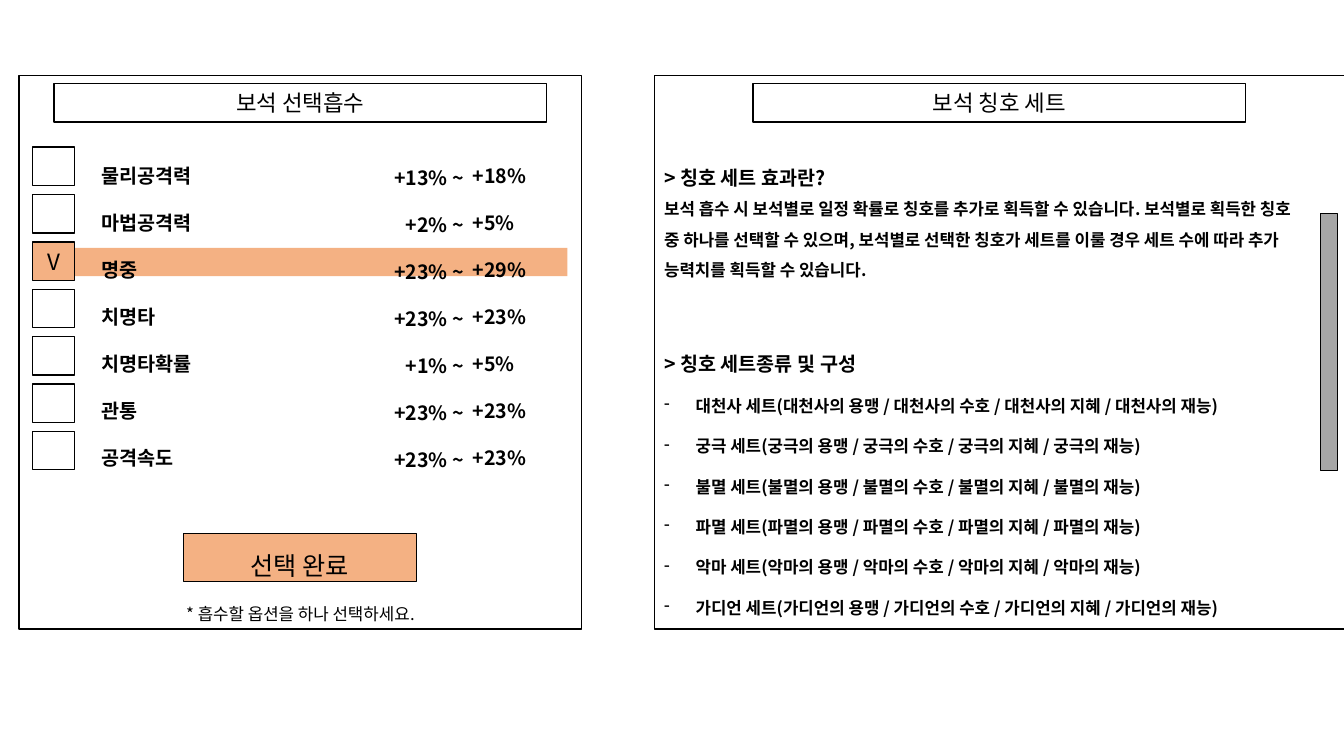
from lxml.etree import SubElement
from pptx import Presentation
from pptx.dml.color import RGBColor
from pptx.enum.shapes import MSO_SHAPE
from pptx.enum.text import MSO_ANCHOR, MSO_AUTO_SIZE, PP_ALIGN
from pptx.oxml.ns import qn
from pptx.util import Pt

BLACK = RGBColor(0, 0, 0)
WHITE = RGBColor(255, 255, 255)
ORANGE = RGBColor(0xF4, 0xB1, 0x83)
GRAY = RGBColor(0xA6, 0xA6, 0xA6)
FONT = "Noto Sans CJK KR"

STATS = [
    ("물리공격력", "+13% ~", "+18%"),
    ("마법공격력", "+2% ~", "+5%"),
    ("명중", "+23% ~", "+29%"),
    ("치명타", "+23% ~", "+23%"),
    ("치명타확률", "+1% ~", "+5%"),
    ("관통", "+23% ~", "+23%"),
    ("공격속도", "+23% ~", "+23%"),
]
CHOSEN = 2
PITCH = 33.84
SETS = ["대천사", "궁극", "불멸", "파멸", "악마", "가디언"]
TRAITS = ["용맹", "수호", "지혜", "재능"]
ABOUT = (
    "보석 흡수 시 보석별로 일정 확률로 칭호를 추가로 획득할 수 있습니다. "
    "보석별로 획득한 칭호 중 하나를 선택할 수 있으며, "
    "보석별로 선택한 칭호가 세트를 이룰 경우 세트 수에 따라 "
    "추가 능력치를 획득할 수 있습니다."
)


def add_run(para, text, size, bold=False):
    run = para.add_run()
    run.text = text
    font = run.font
    font.size = Pt(size)
    font.bold = bold
    font.color.rgb = BLACK
    font.name = FONT
    SubElement(font._element, qn("a:ea"), typeface=FONT)


def add_rect(group, left, top, width, height, fill, edge=True):
    rect = group.shapes.add_shape(
        MSO_SHAPE.RECTANGLE, Pt(left), Pt(top), Pt(width), Pt(height))
    rect.shadow.inherit = False
    rect.fill.solid()
    rect.fill.fore_color.rgb = fill
    if edge:
        rect.line.color.rgb = BLACK
        rect.line.width = Pt(1)
    else:
        rect.line.fill.background()
    return rect


def label(rect, text, size, space=1.0):
    frame = rect.text_frame
    frame.vertical_anchor = MSO_ANCHOR.MIDDLE
    para = frame.paragraphs[0]
    para.alignment = PP_ALIGN.CENTER
    para.line_spacing = space
    add_run(para, text, size)


def add_text(group, left, top, width, height, lines, size,
             bold=True, align=PP_ALIGN.LEFT, space=2.0):
    box = group.shapes.add_textbox(Pt(left), Pt(top), Pt(width), Pt(height))
    frame = box.text_frame
    frame.word_wrap = True
    frame.auto_size = MSO_AUTO_SIZE.SHAPE_TO_FIT_TEXT
    for i, line in enumerate(lines):
        para = frame.add_paragraph() if i else frame.paragraphs[0]
        para.alignment = align
        para.line_spacing = space
        add_run(para, line, size, bold)
    return frame


def add_dash(para):
    props = para._p.get_or_add_pPr()
    props.set("marL", str(Pt(22.5)))
    props.set("indent", str(-Pt(22.5)))
    SubElement(props, qn("a:buFontTx"))
    SubElement(props, qn("a:buChar"), char="-")


def add_panel(slide, left, top, width, height, title):
    group = slide.shapes.add_group_shape()
    add_rect(group, left, top, width, height, WHITE)
    wide = 352
    head = add_rect(group, left + (width - wide) / 2, top + 5.8,
                    wide, 27.4, WHITE)
    label(head, title, 16)
    return group


def add_picker(slide, left, top, width, height):
    group = add_panel(slide, left, top, width, height, "보석 선택흡수")
    first = top + 51.1
    add_rect(group, left + 39.6, first + CHOSEN * PITCH + 4.3,
             352, 20.2, ORANGE, edge=False)
    names, lows, highs = zip(*STATS)
    add_text(group, left + 51.8, top + 42.5, 146.2, 244.8, names, 14)
    add_text(group, left + 234, top + 43.9, 90.7, 244.8, lows, 14,
             align=PP_ALIGN.RIGHT)
    add_text(group, left + 316.8, top + 42.5, 64.1, 244.8, highs, 14)
    for i in range(len(STATS)):
        check = add_rect(group, left + 9.4, first + i * PITCH, 30.2, 27.4,
                         ORANGE if i == CHOSEN else WHITE)
        if i == CHOSEN:
            label(check, "V", 16)
    button = add_rect(group, left + 117.4, top + 326.9, 166.3, 34.6, ORANGE)
    label(button, "선택 완료", 18, 1.5)
    add_text(group, left, top + 373.7, width, 21.6,
             ["* 흡수할 옵션을 하나 선택하세요."], 12,
             bold=False, align=PP_ALIGN.CENTER, space=1.0)


def add_guide(slide, left, top, width, height):
    group = add_panel(slide, left, top, width, height, "보석 칭호 세트")
    frame = add_text(group, left, top + 43.9, 468.7, 344.2,
                     ["> 칭호 세트 효과란?"], 14)
    para = frame.add_paragraph()
    para.line_spacing = 1.5
    add_run(para, ABOUT, 12, True)
    para = frame.add_paragraph()
    para.line_spacing = 2.0
    para.space_before = Pt(34.75)
    add_run(para, "> 칭호 세트종류 및 구성", 14, True)
    for name in SETS:
        para = frame.add_paragraph()
        para.line_spacing = 2.0
        add_dash(para)
        parts = " / ".join(f"{name}의 {trait}" for trait in TRAITS)
        add_run(para, f"{name} 세트({parts})", 12, True)
    add_rect(group, left + 475.9, top + 98.6, 12.2, 183.6, GRAY)


def main():
    deck = Presentation()
    deck.slide_width = Pt(960)
    deck.slide_height = Pt(540)
    slide = deck.slides.add_slide(deck.slide_layouts[6])
    add_picker(slide, 13.7, 54, 401.8, 395.3)
    add_guide(slide, 467.3, 54, 493.2, 395.3)
    deck.save("out.pptx")


if __name__ == "__main__":
    main()
